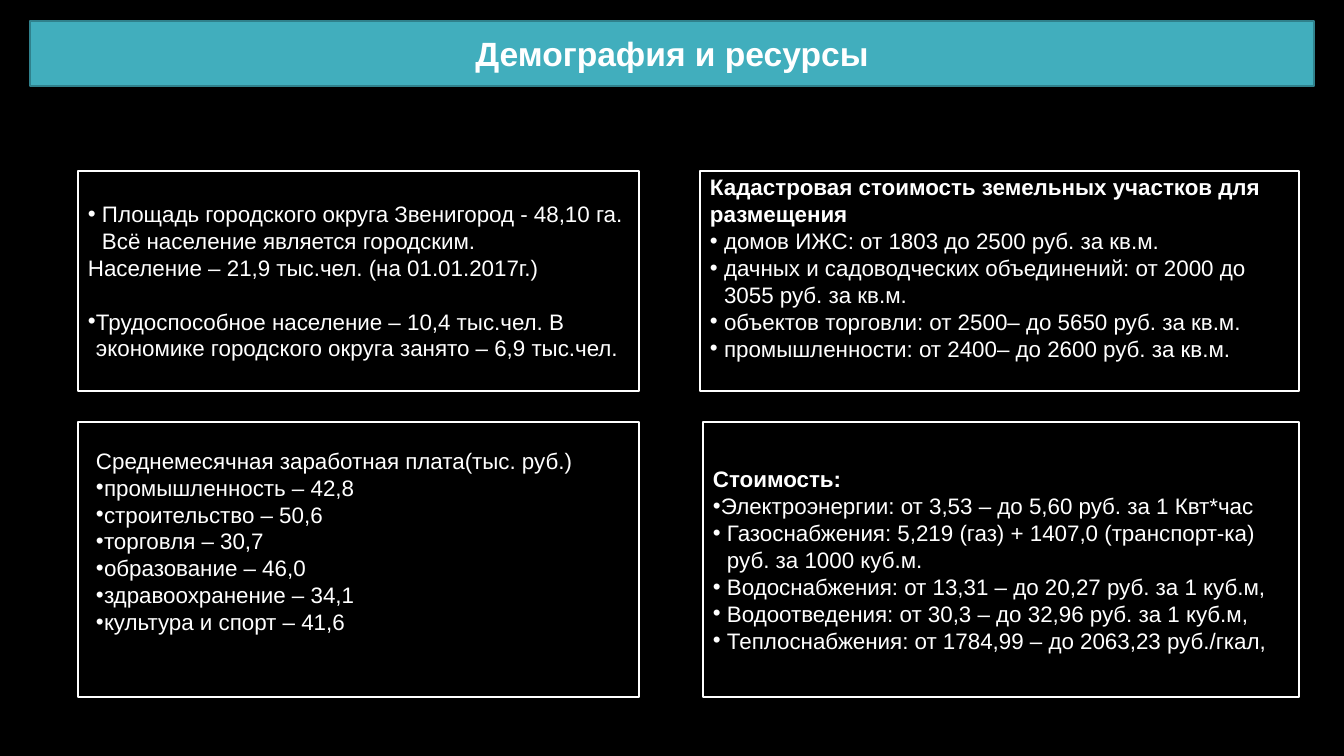
from pptx import Presentation
from pptx.dml.color import RGBColor
from pptx.enum.text import MSO_ANCHOR, MSO_AUTO_SIZE, PP_ALIGN
from pptx.oxml.ns import qn
from pptx.util import Pt
from lxml.etree import SubElement

WIDE, HIGH = 1344, 756
SCALE = 12192000 / WIDE
COLORS = {"back": "000000", "text": "FFFFFF", "bar": "41AEBD", "edge": "30818C"}
FONT = "Arial"

# Hanging indent of each kind of line, in px
HANG = {"head": 0, "plain": 0, "tight": 8, "loose": 14}

AREA = [
    ("loose", "Площадь городского округа Звенигород - 48,10 га. "
              "Всё население является городским."),
    ("plain", "Население – 21,9 тыс.чел. (на 01.01.2017г.)"),
    ("tight", "Трудоспособное население – 10,4 тыс.чел. "
              "В экономике городского округа занято – 6,9 тыс.чел."),
]
LAND = [
    ("head", "Кадастровая стоимость земельных участков для размещения"),
    ("loose", "домов ИЖС: от 1803 до 2500 руб. за кв.м."),
    ("loose", "дачных и садоводческих объединений: от 2000 до 3055 руб. за кв.м."),
    ("loose", "объектов торговли: от 2500– до 5650 руб. за кв.м."),
    ("loose", "промышленности: от 2400– до 2600 руб. за кв.м."),
]
WAGES = [
    ("plain", "Среднемесячная заработная плата(тыс. руб.)"),
    ("tight", "промышленность – 42,8"),
    ("tight", "строительство – 50,6"),
    ("tight", "торговля – 30,7"),
    ("tight", "образование – 46,0"),
    ("tight", "здравоохранение – 34,1"),
    ("tight", "культура и спорт – 41,6"),
]
COSTS = [
    ("head", "Стоимость:"),
    ("tight", "Электроэнергии: от 3,53 – до 5,60 руб. за 1 Квт*час"),
    ("loose", "Газоснабжения: 5,219 (газ) + 1407,0 (транспорт-ка) "
              "руб. за 1000 куб.м."),
    ("loose", "Водоснабжения: от 13,31 – до 20,27 руб. за 1 куб.м,"),
    ("loose", "Водоотведения: от 30,3 – до 32,96 руб. за 1 куб.м,"),
    ("loose", "Теплоснабжения: от 1784,99 – до 2063,23 руб./гкал,"),
]


def px(count):
    return round(count * SCALE)


def color(name):
    return RGBColor.from_string(COLORS[name])


def place(shape, box, edge):
    shape.left, shape.top, shape.width, shape.height = map(px, box)
    shape.line.color.rgb = color(edge)
    shape.line.width = Pt(1)
    frame = shape.text_frame
    frame.word_wrap = True
    frame.auto_size = MSO_AUTO_SIZE.NONE
    return frame


def style(para, size, bold):
    para.space_before = Pt(0)
    para.font.name = FONT
    para.font.size = Pt(size)
    para.font.bold = bold
    para.font.color.rgb = color("text")


def bullet(para, hang):
    props = para._p.get_or_add_pPr()
    props.set("marL", str(px(hang)))
    props.set("indent", str(-px(hang)))
    if hang:
        SubElement(props, qn("a:buChar")).set("char", "•")
    else:
        SubElement(props, qn("a:buNone"))


def add_title(shape, text, box):
    frame = place(shape, box, "edge")
    shape.fill.solid()
    shape.fill.fore_color.rgb = color("bar")
    frame.vertical_anchor = MSO_ANCHOR.MIDDLE
    frame.text = text
    para = frame.paragraphs[0]
    para.alignment = PP_ALIGN.CENTER
    style(para, 24, True)


def add_list(shape, items, box, anchor=MSO_ANCHOR.MIDDLE, pad=(10, 5, 5)):
    frame = place(shape, box, "text")
    frame.vertical_anchor = anchor
    frame.margin_left, frame.margin_top, frame.margin_bottom = map(px, pad)
    frame.text = "\n".join(text for _, text in items)
    for para, (kind, _) in zip(frame.paragraphs, items):
        bullet(para, HANG[kind])
        para.alignment = PP_ALIGN.LEFT
        style(para, 16, kind == "head")


def main():
    deck = Presentation()
    deck.slide_width, deck.slide_height = px(WIDE), px(HIGH)
    slide = deck.slides.add_slide(deck.slide_layouts.get_by_name("Comparison"))
    slide.background.fill.solid()
    slide.background.fill.fore_color.rgb = color("back")

    # Title bar
    add_title(slide.shapes.title, "Демография и ресурсы", (30, 21, 1284, 65))

    # Four framed lists
    area, land, wages, costs = list(slide.placeholders)[1:]
    add_list(area, AREA, (78, 171, 561, 220))
    area.text_frame.paragraphs[-1].space_before = Pt(19)
    add_list(land, LAND, (700, 171, 599, 220), pad=(10, 5, 32))
    add_list(wages, WAGES, (78, 422, 561, 275), MSO_ANCHOR.TOP, (18, 25, 5))
    add_list(costs, COSTS, (703, 422, 596, 275))

    deck.save("out.pptx")


if __name__ == "__main__":
    main()
